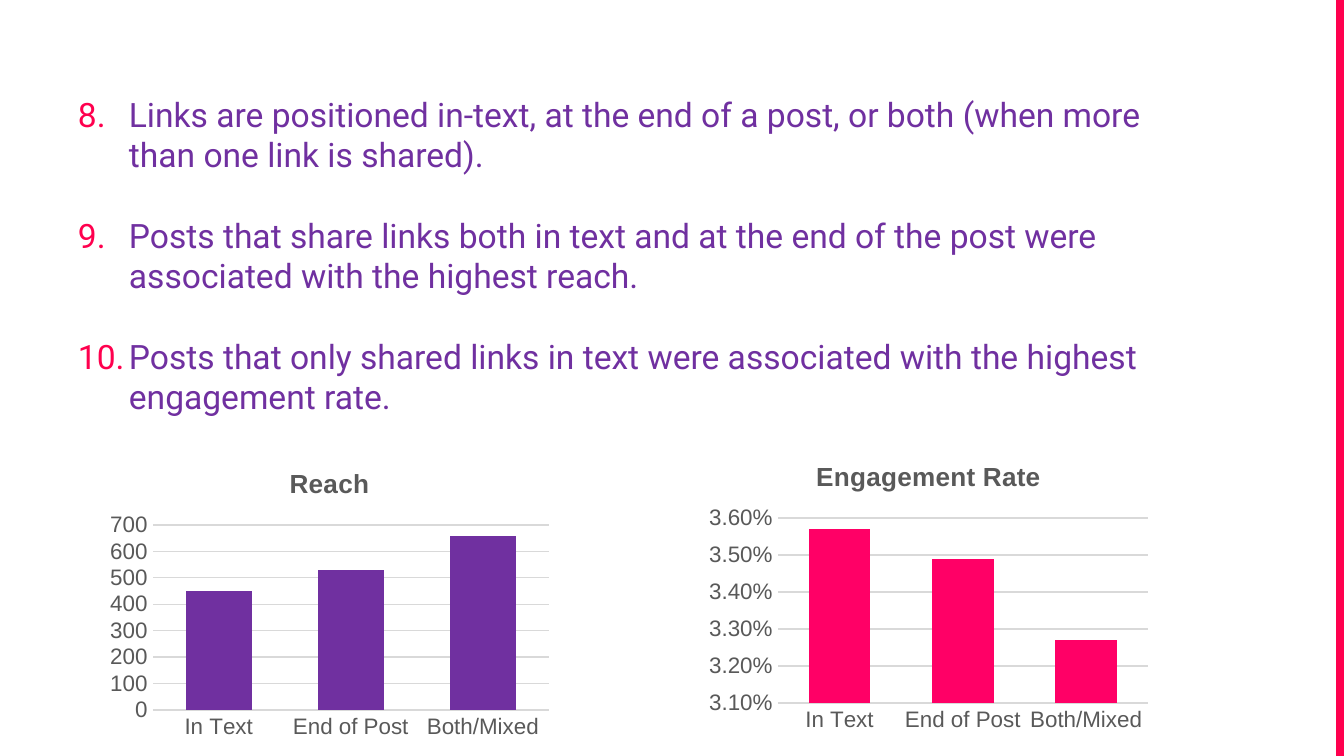
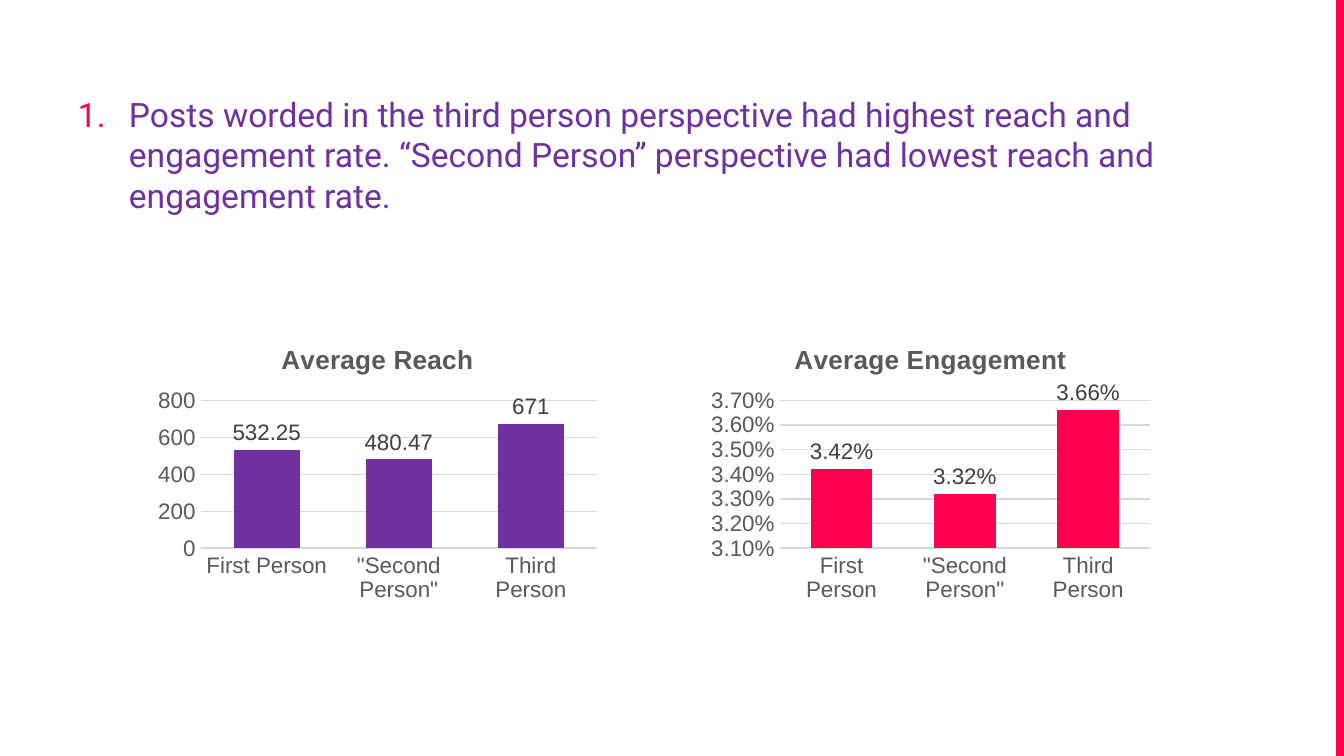
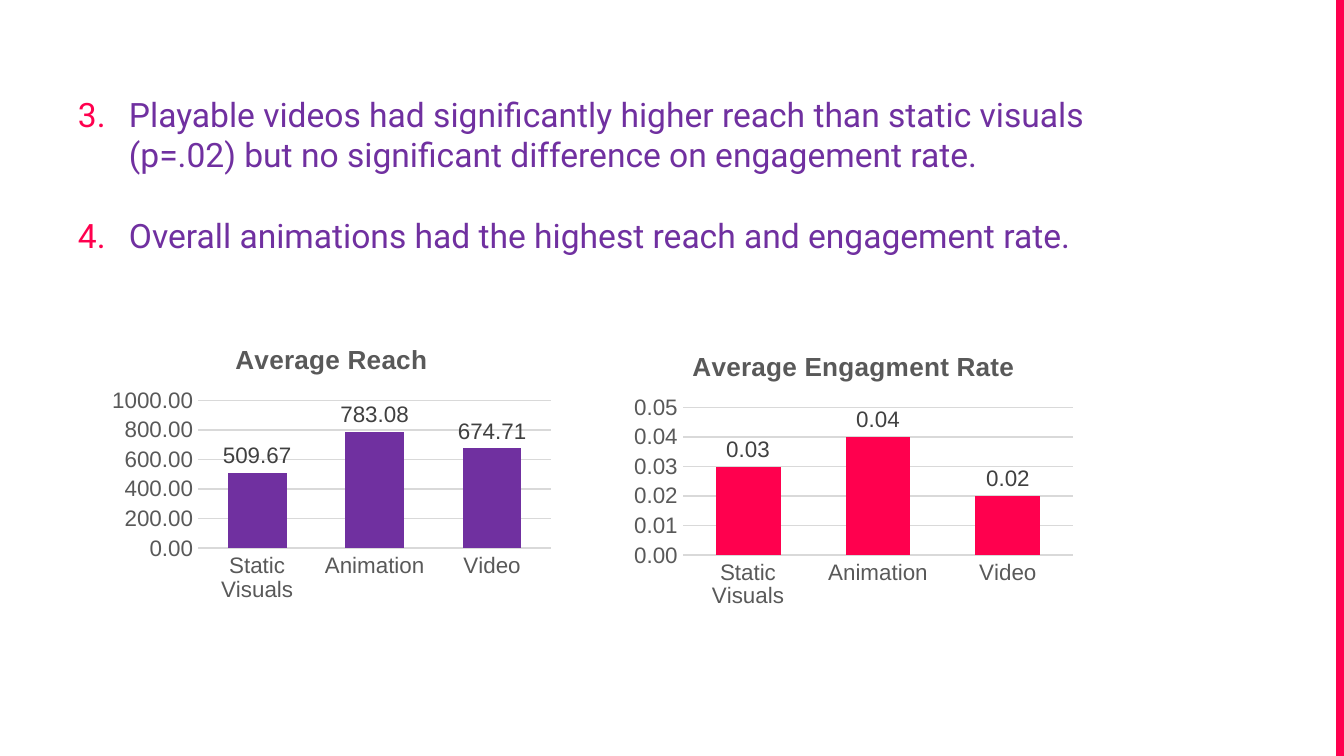
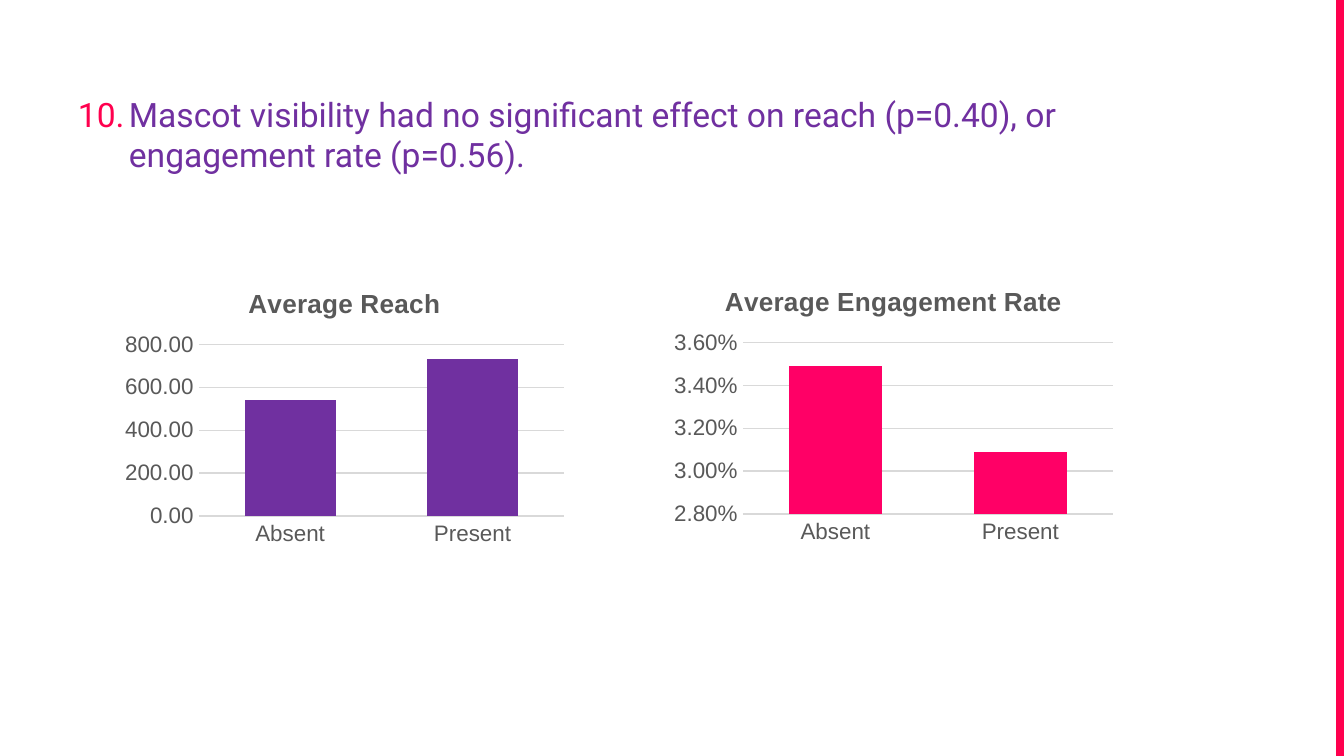
import pptx
import pptx.chart.data
import pptx.dml.color
import pptx.enum.chart
import pptx.enum.shapes
import pptx.enum.text
import pptx.oxml.ns
import pptx.util
from lxml import etree

PX = 914400 / 134.4
WIDE, HIGH = 1344, 756
HEX = {
    "red": "FF004E",
    "pink": "FF0066",
    "purple": "7030A0",
    "gray": "595959",
    "dark": "404040",
    "grid": "D9D9D9",
    "black": "000000",
}
LINE = 40
INDENT = 51
PLACES = ["In Text", "End of Post", "Both/Mixed"]
VOICES = ["First Person", '"Second Person"', "Third Person"]
MEDIA = ["Static Visuals", "Animation", "Video"]
MASCOT = ["Absent", "Present"]


def px(num):
    return pptx.util.Emu(round(num * PX))


def rgb(name):
    return pptx.dml.color.RGBColor.from_string(HEX[name])


def style(font, size, color, face="Arial", bold=False):
    font.size = pptx.util.Pt(size)
    font.name = face
    font.bold = bold
    font.color.rgb = rgb(color)


def add_page(deck):
    """Add a blank slide with the red band at its right edge."""
    page = deck.slides.add_slide(deck.slide_layouts[6])
    band = page.shapes.add_shape(
        pptx.enum.shapes.MSO_SHAPE.RECTANGLE, px(WIDE - 8), 0, px(8), px(HIGH))
    band.shadow.inherit = False
    band.fill.solid()
    band.fill.fore_color.rgb = rgb("red")
    band.line.fill.background()
    return page


def number(para, start):
    """Give a paragraph a red automatic number and a hanging indent."""
    props = para._p.get_or_add_pPr()
    props.set("marL", str(px(INDENT)))
    props.set("indent", str(-px(INDENT)))
    qn = pptx.oxml.ns.qn
    color = etree.SubElement(props, qn("a:buClr"))
    etree.SubElement(color, qn("a:srgbClr"), val=HEX["red"])
    etree.SubElement(props, qn("a:buAutoNum"), type="arabicPeriod", startAt=str(start))


def add_list(page, start, items, lines):
    box = page.shapes.add_textbox(px(65), px(81), px(1142), px(lines * LINE + 27))
    frame = box.text_frame
    frame.word_wrap = True
    frame.vertical_anchor = pptx.enum.text.MSO_ANCHOR.TOP
    frame.margin_left = frame.margin_right = px(13)
    frame.margin_top = frame.margin_bottom = px(13)
    frame.text = "\n".join(items)
    for spot, para in enumerate(frame.paragraphs):
        number(para, start)
        if spot:
            para.space_before = pptx.util.Pt(21.6)
        for run in para.runs:
            style(run.font, 18, "purple", "Roboto")


def set_axes(chart, scale, form):
    low, high, step = scale
    none = pptx.enum.chart.XL_TICK_MARK.NONE
    for axis in (chart.category_axis, chart.value_axis):
        axis.major_tick_mark = axis.minor_tick_mark = none
        style(axis.tick_labels.font, 12, "gray")
    base = chart.category_axis.format.line
    base.color.rgb = rgb("grid")
    base.width = pptx.util.Pt(1)
    axis = chart.value_axis
    axis.minimum_scale, axis.maximum_scale, axis.major_unit = low, high, step
    axis.format.line.fill.background()
    axis.has_major_gridlines = True
    grid = axis.major_gridlines.format.line
    grid.color.rgb = rgb("grid")
    grid.width = pptx.util.Pt(0.75)
    axis.tick_labels.number_format = form
    axis.tick_labels.number_format_is_linked = False


def add_bars(page, spot, title, cats, vals, color, scale, form="General",
             tall=282, marks=False, name=None):
    """Add a column chart; scale is (low, high, step), marks shows values."""
    data = pptx.chart.data.CategoryChartData(number_format=form)
    data.categories = cats
    data.add_series(name or title, vals)
    left, top = spot
    kind = pptx.enum.chart.XL_CHART_TYPE.COLUMN_CLUSTERED
    chart = page.shapes.add_chart(kind, px(left), px(top), px(457), px(tall), data).chart
    style(chart.font, 10, "black")
    chart.has_legend = False
    chart.has_title = True
    chart.chart_title.include_in_layout = False
    head = chart.chart_title.text_frame
    head.text = title
    style(head.paragraphs[0].runs[0].font, 14, "gray", bold=True)
    set_axes(chart, scale, form)
    plot = chart.plots[0]
    plot.gap_width, plot.overlap = 100, -24
    plot.vary_by_categories = False
    bars = plot.series[0]
    bars.invert_if_negative = False
    bars.format.fill.solid()
    bars.format.fill.fore_color.rgb = rgb(color)
    if marks:
        tags = bars.data_labels
        tags.show_value = True
        tags.position = pptx.enum.chart.XL_LABEL_POSITION.OUTSIDE_END
        tags.number_format = form
        tags.number_format_is_linked = False
        style(tags.font, 12, "dark")


def main():
    deck = pptx.Presentation()
    deck.slide_width, deck.slide_height = px(WIDE), px(HIGH)

    page = add_page(deck)
    add_list(page, 8, [
        "Links are positioned in-text, at the end of a post, or both (when more than one link is shared).",
        "Posts that share links both in text and at the end of the post were associated with the highest reach.",
        "Posts that only shared links in text were associated with the highest engagement rate.",
    ], 8)
    add_bars(page, (101, 449), "Reach", PLACES, [450, 530, 660], "purple",
             (0, 700, 100), tall=296)
    add_bars(page, (700, 442), "Engagement Rate", PLACES, [0.0357, 0.0349, 0.0327],
             "pink", (0.031, 0.036, 0.001), "0.00%", tall=296, name="Series 1")

    page = add_page(deck)
    add_list(page, 1, [
        "Posts worded in the third person perspective had highest reach and engagement rate. "
        "“Second Person” perspective had lowest reach and engagement rate.",
    ], 3)
    add_bars(page, (149, 325), "Average Reach", VOICES, [532.25, 480.47, 671], "purple",
             (0, 800, 200), marks=True)
    add_bars(page, (702, 325), "Average Engagement", VOICES, [0.0342, 0.0332, 0.0366],
             "red", (0.031, 0.037, 0.001), "0.00%", marks=True)

    page = add_page(deck)
    add_list(page, 3, [
        "Playable videos had significantly higher reach than static visuals (p=.02) "
        "but no significant difference on engagement rate.",
        "Overall animations had the highest reach and engagement rate.",
    ], 4)
    add_bars(page, (103, 325), "Average Reach", MEDIA, [509.67, 783.08, 674.71], "purple",
             (0, 1000, 200), "0.00", marks=True)
    add_bars(page, (625, 332), "Average Engagment Rate", MEDIA, [0.03, 0.04, 0.02], "red",
             (0, 0.05, 0.01), "0.00", marks=True)

    page = add_page(deck)
    add_list(page, 10, [
        "Mascot visibility had no significant effect on reach (p=0.40), "
        "or engagement rate (p=0.56).",
    ], 2)
    add_bars(page, (116, 269), "Average Reach", MASCOT, [540, 730], "purple",
             (0, 800, 200), "0.00")
    add_bars(page, (665, 267), "Average Engagement Rate", MASCOT, [0.0349, 0.0309], "pink",
             (0.028, 0.036, 0.002), "0.00%")

    deck.save("out.pptx")


if __name__ == "__main__":
    main()
